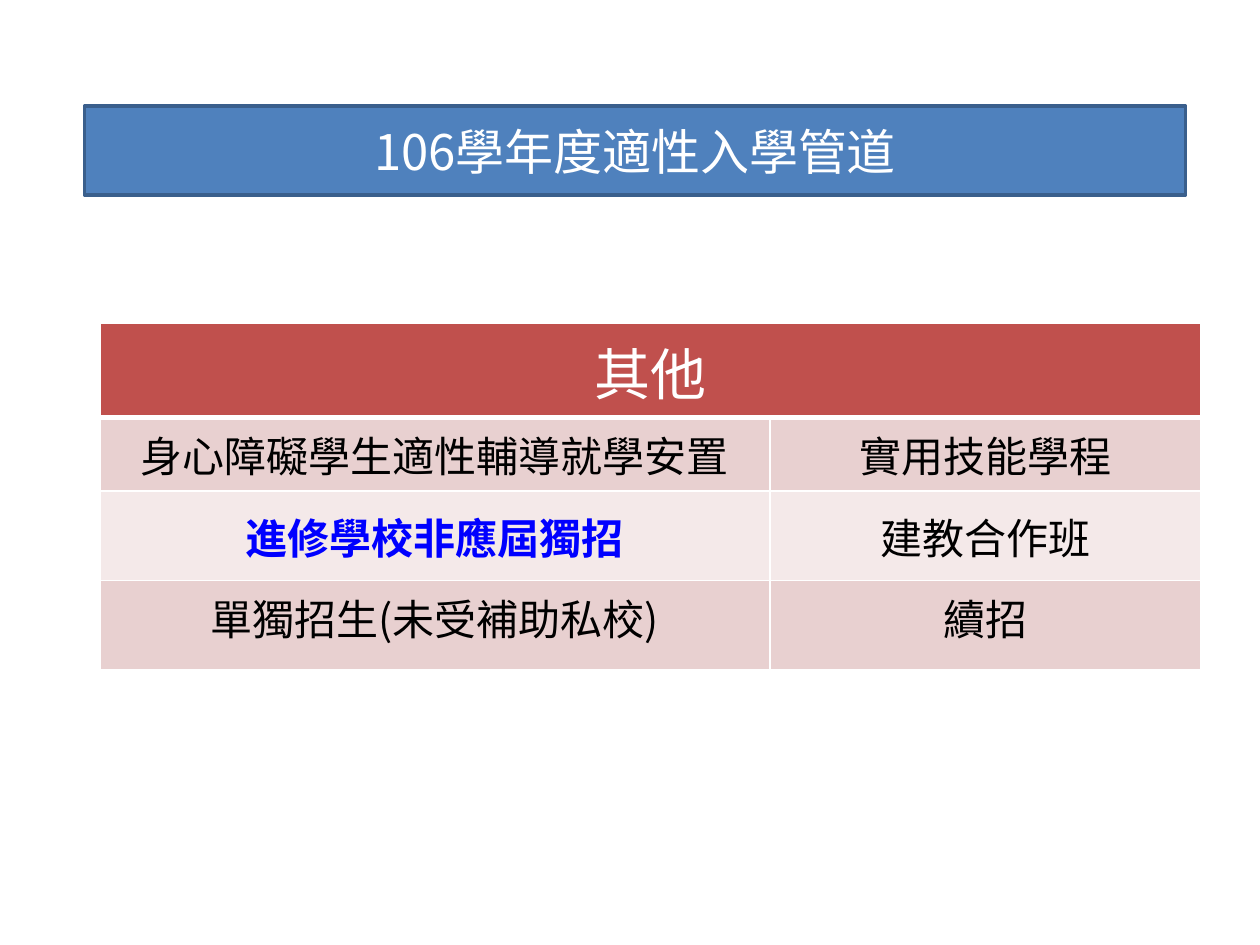
from dataclasses import dataclass

from lxml import etree
from pptx import Presentation
from pptx.dml.color import RGBColor
from pptx.enum.text import MSO_ANCHOR, PP_ALIGN
from pptx.oxml.ns import qn
from pptx.util import Pt

CENTER = PP_ALIGN.CENTER
TOP, MIDDLE = MSO_ANCHOR.TOP, MSO_ANCHOR.MIDDLE

WHITE = RGBColor(0xFF, 0xFF, 0xFF)
BLACK = RGBColor(0x00, 0x00, 0x00)
BLUE = RGBColor(0x00, 0x00, 0xFF)
BANNER_FILL = RGBColor(0x4F, 0x81, 0xBD)
BANNER_LINE = RGBColor(0x3A, 0x5F, 0x8C)
HEADER_FILL = RGBColor(0xC0, 0x50, 0x4D)
DARK_BAND = RGBColor(0xE8, 0xD0, 0xD0)
LIGHT_BAND = RGBColor(0xF4, 0xE9, 0xE9)

FONT = "Noto Sans CJK SC"
BANNER_BOX = (48.25, 60.5, 629.25, 51)
TABLE_LEFT, TABLE_TOP = 57, 185
COLUMN_WIDTHS = (383, 246.25)
HIGHLIGHT = "進修學校非應屆獨招"


@dataclass
class Row:
    texts: tuple[str, ...]
    height: float
    fill: RGBColor
    anchor: MSO_ANCHOR = MIDDLE
    size: float = 24
    color: RGBColor = BLACK
    bottom_border: float = 1


ROWS = (
    Row(("其他", ""), 51, HEADER_FILL, TOP, 32, WHITE, 3),
    Row(("身心障礙學生適性輔導就學安置", "實用技能學程"), 34, DARK_BAND),
    Row((HIGHLIGHT, "建教合作班"), 51, LIGHT_BAND),
    Row(("單獨招生(未受補助私校)", "續招"), 51, DARK_BAND, TOP),
)


def write_text(text_frame, text: str, size: float, color: RGBColor, bold: bool = False) -> None:
    paragraph = text_frame.paragraphs[0]
    paragraph.alignment = CENTER
    run = paragraph.add_run()
    run.text = text
    for name, value in {"name": FONT, "size": Pt(size), "bold": bold}.items():
        setattr(run.font, name, value)
    run.font.color.rgb = color
    latin = run.font._element.find(qn("a:latin"))
    east_asian = etree.Element(qn("a:ea"), typeface=FONT)
    latin.addnext(east_asian)


def set_borders(cell, widths: dict[str, float]) -> None:
    properties = cell._tc.get_or_add_tcPr()
    for side, width in widths.items():
        line = etree.SubElement(properties, qn(f"a:ln{side}"), w=str(Pt(width)))
        fill = etree.SubElement(line, qn("a:solidFill"))
        etree.SubElement(fill, qn("a:srgbClr"), val=str(WHITE))


def add_banner(slide, text: str) -> None:
    banner = slide.shapes.title
    for name, value in zip(("left", "top", "width", "height"), BANNER_BOX):
        setattr(banner, name, Pt(value))
    banner.fill.solid()
    banner.fill.fore_color.rgb = BANNER_FILL
    banner.line.color.rgb = BANNER_LINE
    banner.line.width = Pt(2)
    banner.text_frame.vertical_anchor = MIDDLE
    write_text(banner.text_frame, text, 28, WHITE)


def add_admission_table(slide, rows: tuple[Row, ...]) -> None:
    height = sum(row.height for row in rows)
    table = slide.shapes.add_table(
        len(rows), len(COLUMN_WIDTHS),
        Pt(TABLE_LEFT), Pt(TABLE_TOP), Pt(sum(COLUMN_WIDTHS)), Pt(height),
    ).table
    for column, width in zip(table.columns, COLUMN_WIDTHS):
        column.width = Pt(width)
    top_border = 1
    for row_index, row in enumerate(rows):
        table.rows[row_index].height = Pt(row.height)
        for cell, text in zip(table.rows[row_index].cells, row.texts):
            set_borders(cell, {"L": 1, "R": 1, "T": top_border, "B": row.bottom_border})
            cell.fill.solid()
            cell.fill.fore_color.rgb = row.fill
            cell.vertical_anchor = row.anchor
            if text:
                highlighted = text == HIGHLIGHT
                color = BLUE if highlighted else row.color
                write_text(cell.text_frame, text, row.size, color, highlighted)
        top_border = row.bottom_border
    table.cell(0, 0).merge(table.cell(0, len(COLUMN_WIDTHS) - 1))


def main() -> None:
    presentation = Presentation()
    presentation.slide_width, presentation.slide_height = Pt(720), Pt(540)
    slide = presentation.slides.add_slide(presentation.slide_layouts.get_by_name("Title Only"))
    add_admission_table(slide, ROWS)
    add_banner(slide, "106學年度適性入學管道")
    presentation.save("out.pptx")


if __name__ == "__main__":
    main()
